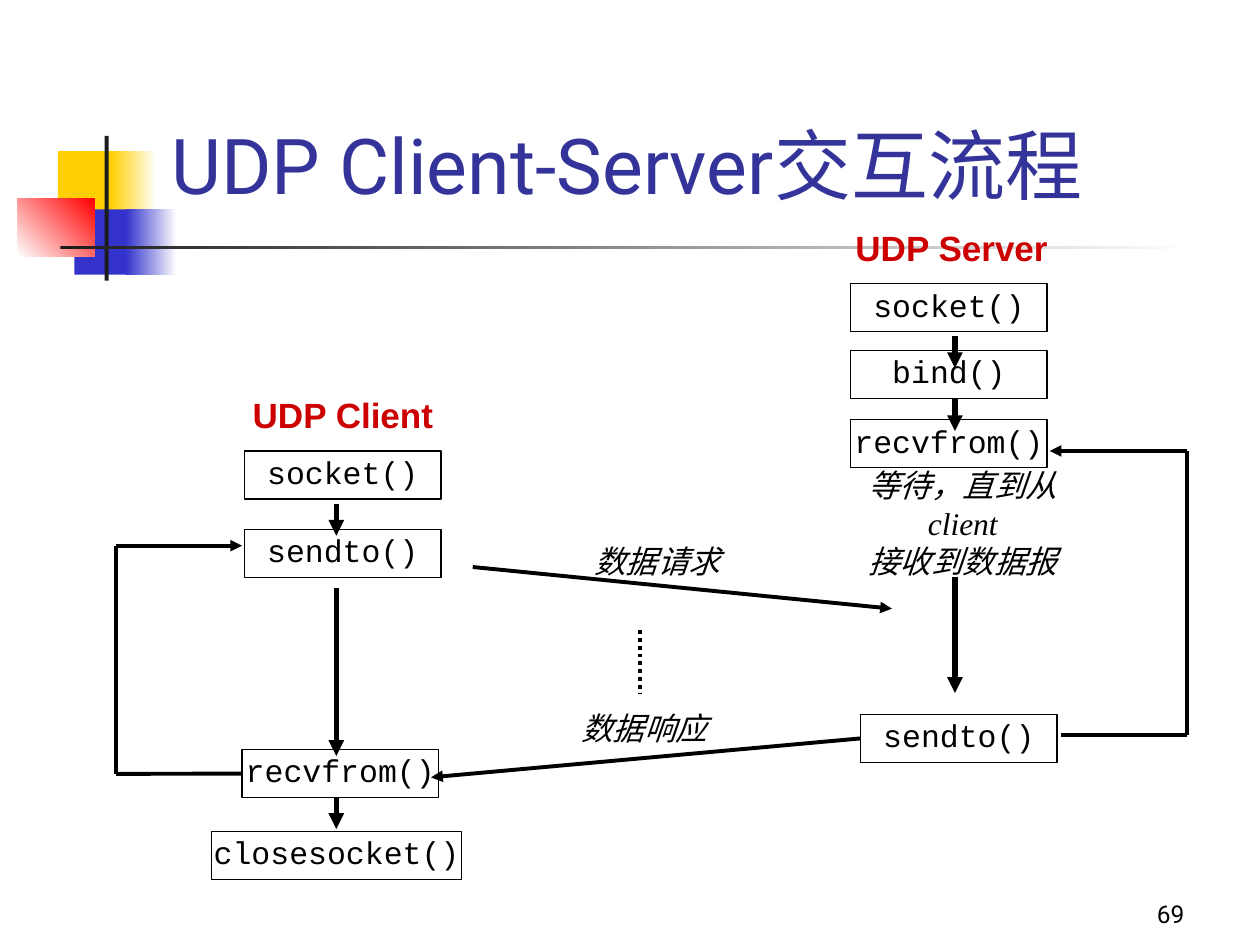
from dataclasses import dataclass
from typing import Any, NamedTuple, Optional

import pptx
import pptx.dml.color
import pptx.enum.dml
import pptx.enum.shapes
import pptx.enum.text
import pptx.oxml
import pptx.oxml.ns
import pptx.util

Cm = pptx.util.Cm
Align = pptx.enum.text.PP_ALIGN
Anchor = pptx.enum.text.MSO_ANCHOR


def rgb(code: str) -> pptx.dml.color.RGBColor:
    return pptx.dml.color.RGBColor.from_string(code)


def style(size: float, name: str, color: str, **extra: Any) -> dict[str, Any]:
    return {"size": pptx.util.Pt(size), "name": name, "color": color, **extra}


@dataclass(frozen=True)
class Theme:
    ink = "000000"
    white = "FFFFFF"
    yellow = "FFCF01"
    blue = "3333CC"
    red = "FF0000"
    charcoal = "1C1C1C"
    title = style(44, "Roboto", "333399")
    number = style(14, "Roboto", "000000")
    heading = style(20, "Arial", "CC0000", bold=True)
    call = style(18, "Courier New", "000000")
    note = style(18, "Times New Roman", "000000", italic=True)
    border, link, step = 0.75, 2.25, 3


THEME = Theme()


class Frame(NamedTuple):
    """Left, top, width and height in centimetres."""
    left: float
    top: float
    width: float
    height: float

    def lengths(self) -> list[int]:
        return [Cm(value) for value in self]


class Ornament(NamedTuple):
    frame: Frame
    start: str
    end: Optional[str] = None
    angle: float = 0


class Call(NamedTuple):
    key: str
    name: str
    left: float
    top: float
    width: float = 3.96


class Label(NamedTuple):
    text: str
    frame: Frame
    format: dict[str, Any]
    align: Any = Align.CENTER
    anchor: Any = Anchor.MIDDLE
    wrap: bool = False


class Link(NamedTuple):
    x1: float
    y1: float
    x2: float
    y2: float
    width: float = THEME.link
    arrow: bool = False
    dotted: bool = False
    source: Optional[str] = None


ORNAMENTS = [
    Ornament(Frame(1.17, 3.05, 1.22, 1.32), THEME.yellow),
    Ornament(Frame(2.24, 3.05, 0.91, 1.32), THEME.yellow, THEME.white),
    Ornament(Frame(1.5, 4.22, 1.17, 1.32), THEME.blue),
    Ornament(Frame(2.54, 4.22, 1.02, 1.32), THEME.blue, THEME.white),
    Ornament(Frame(0.36, 4.01, 1.55, 1.17), THEME.white, THEME.red, 45),
    Ornament(Frame(2.11, 2.74, 0.08, 2.92), THEME.charcoal),
    Ornament(Frame(1.22, 4.95, 22.86, 0.08), THEME.charcoal, THEME.white),
]

CALL_HEIGHT = 0.97
CALLS = [
    Call("server socket", "socket()", 17.15, 5.72),
    Call("server bind", "bind()", 17.15, 7.06),
    Call("server receive", "recvfrom()", 17.15, 8.46),
    Call("server send", "sendto()", 17.35, 14.4),
    Call("client socket", "socket()", 4.93, 9.09),
    Call("client send", "sendto()", 4.93, 10.67),
    Call("client receive", "recvfrom()", 4.88, 15.11),
    Call("client close", "closesocket()", 4.27, 16.76, 5.03),
]

LABELS = [
    Label("69", Frame(18.85, 17.58, 5.28, 1.27), THEME.number, Align.RIGHT, Anchor.BOTTOM, True),
    Label("UDP Server", Frame(16.99, 4.45, 4.39, 1.09), THEME.heading),
    Label("UDP Client", Frame(4.83, 7.82, 4.17, 1.09), THEME.heading),
    Label("等待，直到从client\n接收到数据报", Frame(16.64, 9.65, 5.54, 1.78), THEME.note, wrap=True),
    Label("数据请求", Frame(11.73, 10.8, 3.05, 1.02), THEME.note),
    Label("数据响应", Frame(11.46, 14.17, 3.05, 1.02), THEME.note),
]

# Column centre, then the top and bottom of each downward step
STEPS = {
    6.78: [(10.16, 10.8), (11.86, 15.24), (16.08, 16.71)],
    19.25: [(6.78, 7.42), (8.05, 8.69), (11.63, 13.97)],
}

LINKS = [
    Link(9.53, 11.43, 17.98, 12.27, arrow=True),
    Link(17.35, 14.81, 8.69, 15.67, arrow=True, source="server send"),
    Link(12.9, 12.7, 12.9, 13.97, dotted=True),
]


def loop_links(x1: float, y1: float, outer: float, x2: float, y2: float,
               source: Optional[str] = None) -> list[Link]:
    """Three legs leading out to the side, up, and back in with an arrow."""
    return [Link(x1, y1, outer, y1, source=source),
            Link(outer, y1, outer, y2),
            Link(outer, y2, x2, y2, arrow=True)]


def write(shape: Any, text: str, format: dict[str, Any], align: Any, anchor: Any,
          wrap: bool, spacing: float = 1.0) -> None:
    frame = shape.text_frame
    settings = {"text": text, "word_wrap": wrap, "vertical_anchor": anchor,
                "auto_size": pptx.enum.text.MSO_AUTO_SIZE.NONE}
    for key, value in settings.items():
        setattr(frame, key, value)
    for para in frame.paragraphs:
        para.alignment, para.line_spacing = align, spacing
        for span in para.runs:
            for key, value in format.items():
                if key == "color":
                    span.font.color.rgb = rgb(value)
                else:
                    setattr(span.font, key, value)


def add_rectangle(page: Any, frame: Frame) -> Any:
    box = page.shapes.add_shape(pptx.enum.shapes.MSO_SHAPE.RECTANGLE, *frame.lengths())
    box.shadow.inherit = False
    return box


def add_ornament(page: Any, ornament: Ornament) -> None:
    box = add_rectangle(page, ornament.frame)
    box.line.fill.background()
    if ornament.end is None:
        box.fill.solid()
        box.fill.fore_color.rgb = rgb(ornament.start)
        return
    box.fill.gradient()
    box.fill.gradient_angle = ornament.angle
    for stop, color in zip(box.fill.gradient_stops, (ornament.start, ornament.end)):
        stop.color.rgb = rgb(color)


def add_call(page: Any, call: Call) -> Any:
    box = add_rectangle(page, Frame(call.left, call.top, call.width, CALL_HEIGHT))
    box.fill.background()
    box.line.color.rgb = rgb(THEME.ink)
    box.line.width = pptx.util.Pt(THEME.border)
    write(box, call.name, THEME.call, Align.CENTER, Anchor.TOP, False, 0.9)
    return box


def add_label(page: Any, label: Label) -> None:
    box = page.shapes.add_textbox(*label.frame.lengths())
    write(box, label.text, label.format, label.align, label.anchor, label.wrap)


def add_link(page: Any, link: Link, boxes: dict[str, Any]) -> None:
    line = page.shapes.add_connector(pptx.enum.shapes.MSO_CONNECTOR.STRAIGHT,
                                     *(Cm(value) for value in link[:4]))
    if link.source:
        line.begin_connect(boxes[link.source], 1)
    line.line.color.rgb = rgb(THEME.ink)
    line.line.width = pptx.util.Pt(link.width)
    if link.dotted:
        line.line.dash_style = pptx.enum.dml.MSO_LINE.ROUND_DOT
    properties = line._element.spPr
    if link.arrow:
        outline = properties.find(pptx.oxml.ns.qn("a:ln"))
        outline.append(pptx.oxml.parse_xml(
            f'<a:tailEnd {pptx.oxml.ns.nsdecls("a")} type="triangle"/>'))
    properties.append(pptx.oxml.parse_xml(f'<a:effectLst {pptx.oxml.ns.nsdecls("a")}/>'))


def main() -> None:
    deck = pptx.Presentation()
    deck.slide_width, deck.slide_height = Cm(25.4), Cm(19.05)
    page = deck.slides.add_slide(deck.slide_layouts[5])
    title = page.shapes.title
    title.left, title.top, title.width, title.height = Frame(3.2, 1.73, 21.64, 2.62).lengths()
    write(title, "UDP Client-Server交互流程", THEME.title, Align.LEFT, Anchor.BOTTOM, True)

    for ornament in ORNAMENTS:
        add_ornament(page, ornament)
    boxes = {call.key: add_call(page, call) for call in CALLS}
    for label in LABELS:
        add_label(page, label)
    steps = [Link(x, top, x, bottom, THEME.step, arrow=True)
             for x, spans in STEPS.items() for top, bottom in spans]
    loops = (loop_links(21.39, 14.81, 23.93, 21.16, 9.09)
             + loop_links(4.88, 15.6, 2.34, 4.88, 11, "client receive"))
    for link in LINKS + steps + loops:
        add_link(page, link, boxes)
    deck.save("out.pptx")


if __name__ == "__main__":
    main()
